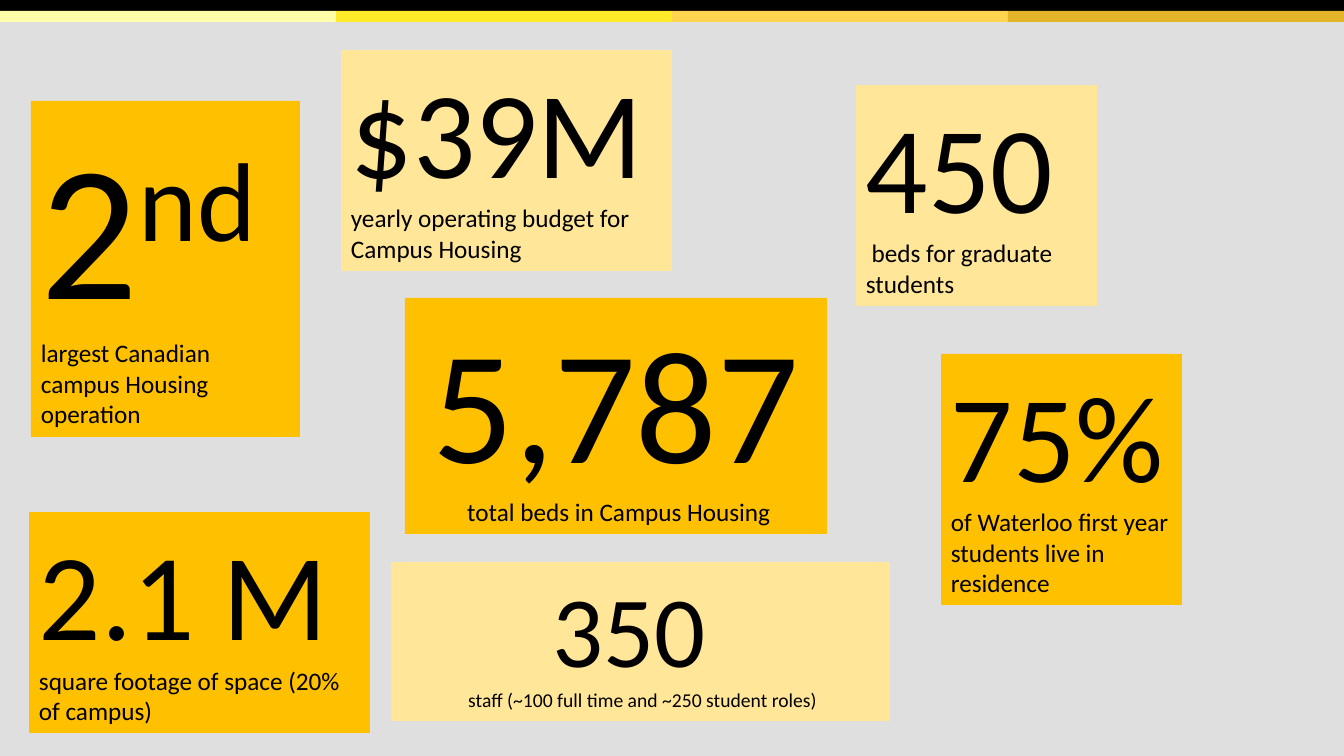
from dataclasses import dataclass

from pptx import Presentation
from pptx.dml.color import RGBColor
from pptx.enum.shapes import MSO_SHAPE
from pptx.enum.text import MSO_AUTO_SIZE, PP_ALIGN
from pptx.util import Pt

PX = 914400 / 100.8  # EMU in one px
SLIDE_WIDTH, SLIDE_HEIGHT = 1344, 756


@dataclass(frozen=True)
class Theme:
    font: str = "Calibri"
    ink: str = "000000"
    background: str = "DFDFDF"
    strong: str = "FFC000"
    soft: str = "FFE699"
    bands: tuple = ("FFFFAA", "FFEA29", "FFD54F", "E4B429")
    hero: int = 138
    total: int = 115
    figure: int = 88
    small_figure: int = 72
    caption: int = 18
    small_caption: int = 14


THEME = Theme()


@dataclass(frozen=True)
class Fact:
    box: tuple
    figure: str
    caption: str
    color: str
    size: int = THEME.figure
    caption_size: int = THEME.caption
    superscript: str = ""
    centred: bool = False
    own_line: bool = False  # caption stands in its own paragraph


FACTS = (
    Fact((31, 101, 269, 336), "2", " largest Canadian campus Housing operation",
         THEME.strong, THEME.hero, superscript="nd"),
    Fact((405, 298, 422, 236), "5,787", " total beds in Campus Housing",
         THEME.strong, THEME.total, centred=True, own_line=True),
    Fact((941, 354, 241, 251), "75%", " of Waterloo first year students live in residence",
         THEME.strong),
    Fact((856, 85, 241, 221), "450", " beds for graduate students",
         THEME.soft, own_line=True),
    Fact((341, 50, 331, 221), "$39M", " yearly operating budget for Campus Housing",
         THEME.soft),
    Fact((29, 512, 341, 221), "2.1 M", " square footage of space (20% of campus)",
         THEME.strong),
    Fact((391, 562, 499, 159), "350 ", " staff (~100 full time and ~250 student roles)",
         THEME.soft, THEME.small_figure, THEME.small_caption, centred=True, own_line=True),
)


def to_emu(box):
    return [round(length * PX) for length in box]


def paint(shape, color):
    shape.fill.solid()
    shape.fill.fore_color.rgb = RGBColor.from_string(color)


def add_bar(slide, box, color):
    bar = slide.shapes.add_shape(MSO_SHAPE.RECTANGLE, *to_emu(box))
    bar.shadow.inherit = False
    paint(bar, color)
    bar.line.fill.background()


def add_header(slide, box):
    """Black strip above a row of equal colour bands."""
    left, top, width, height = box
    half = height // 2
    add_bar(slide, (left, top, width, half + 1), THEME.ink)
    band_width = width // len(THEME.bands)
    for index, color in enumerate(THEME.bands):
        add_bar(slide, (left + index * band_width, top + half, band_width, half), color)


def add_run(paragraph, text, size):
    run = paragraph.add_run()
    run.text = text
    run.font.name = THEME.font
    run.font.size = Pt(size)
    run.font.color.rgb = RGBColor.from_string(THEME.ink)
    return run


def add_fact(slide, fact):
    """Coloured card with a large figure and its caption."""
    card = slide.shapes.add_textbox(*to_emu(fact.box))
    paint(card, fact.color)
    frame = card.text_frame
    frame.word_wrap = True
    frame.auto_size = MSO_AUTO_SIZE.SHAPE_TO_FIT_TEXT
    paragraph = frame.paragraphs[0]
    add_run(paragraph, fact.figure, fact.size)
    if fact.superscript:
        raised = add_run(paragraph, fact.superscript, fact.size)
        raised.font._element.set("baseline", "30000")
    if fact.own_line:
        paragraph = frame.add_paragraph()
    add_run(paragraph, fact.caption, fact.caption_size)
    for paragraph in frame.paragraphs:
        paragraph.alignment = PP_ALIGN.CENTER if fact.centred else PP_ALIGN.LEFT


def build_facts_slide(presentation):
    slide = presentation.slides.add_slide(presentation.slide_layouts[6])
    paint(slide.background, THEME.background)
    add_header(slide, (0, 0, SLIDE_WIDTH, 22))
    for fact in FACTS:
        add_fact(slide, fact)


def main():
    presentation = Presentation()
    presentation.slide_width, presentation.slide_height = to_emu((SLIDE_WIDTH, SLIDE_HEIGHT))
    build_facts_slide(presentation)
    presentation.save("out.pptx")


if __name__ == "__main__":
    main()
